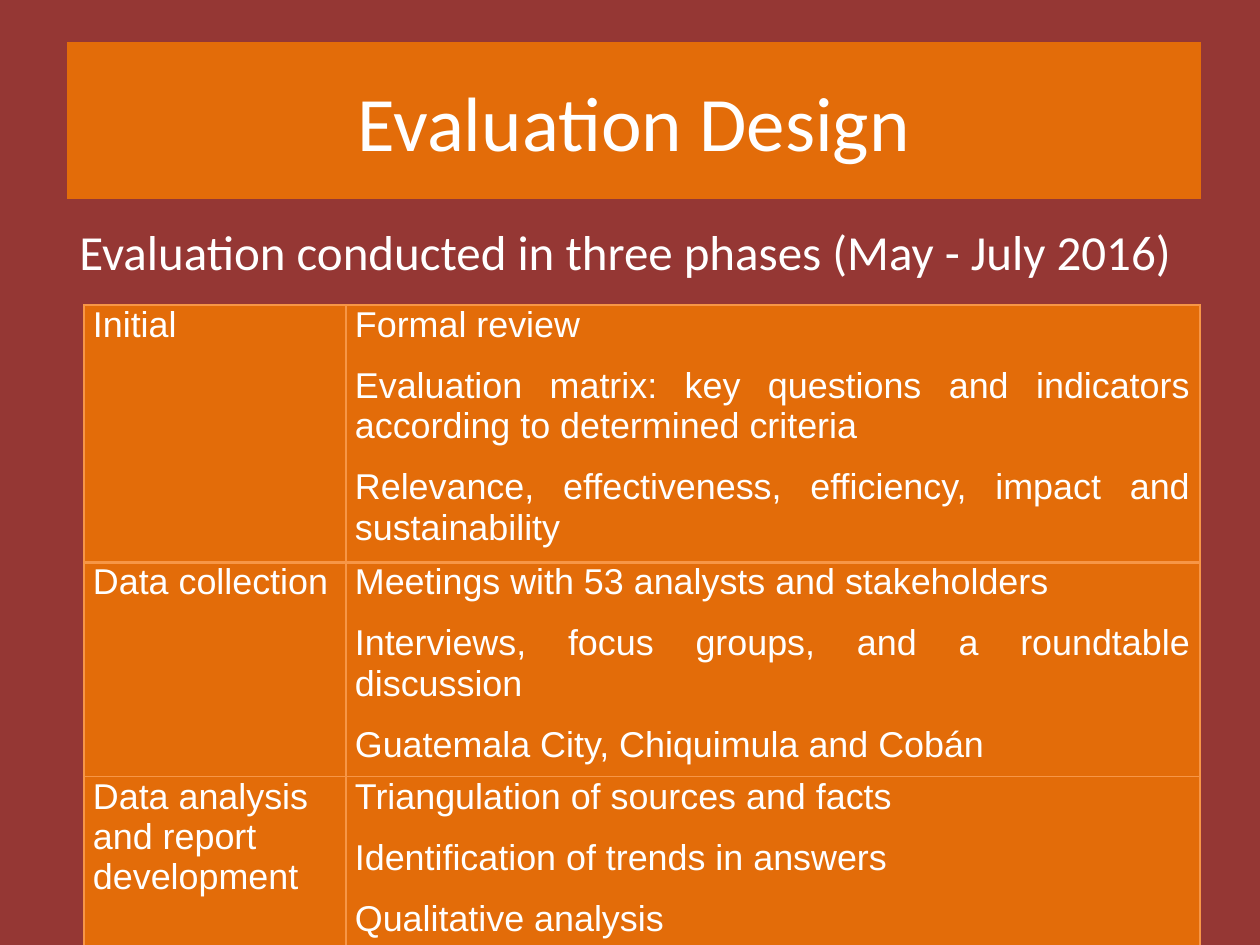
from dataclasses import dataclass
from lxml.etree import SubElement
from pptx import Presentation
from pptx.dml.color import RGBColor as RGB
from pptx.enum.text import MSO_ANCHOR as ANCHOR, PP_ALIGN as ALIGN
from pptx.oxml.ns import qn
from pptx.util import Pt

PX = 914400 // 126


@dataclass(frozen=True)
class Theme:
    back: RGB = RGB.from_string("953734")
    fill: RGB = RGB.from_string("E36C09")
    text: RGB = RGB.from_string("FFFFFF")
    border: str = "F79646"
    head_font: str = "Calibri"
    table_font: str = "Arial"
    title_size: float = 44
    lead_size: float = 28
    table_size: float = 20.5


theme = Theme()
phases = [
    ("Initial", [
        "Formal review",
        "Evaluation matrix: key questions and indicators according to determined criteria ",
        "Relevance, effectiveness, efficiency, impact and sustainability"]),
    ("Data collection", [
        "Meetings with 53 analysts and stakeholders",
        "Interviews, focus groups, and a roundtable discussion",
        "Guatemala City, Chiquimula and Cobán"]),
    ("Data analysis and report development", [
        "Triangulation of sources and facts",
        "Identification of trends in answers",
        "Qualitative analysis"]),
]
col_widths = [262, 854]
row_heights = [213, 176, 176]


def write(tf, lines, font, size, align):
    tf.text = "\n".join(lines)
    tf.word_wrap = True
    for p in tf.paragraphs:
        p.alignment = align
        for r in p.runs:
            r.font.name = font
            r.font.size = Pt(size)
            r.font.color.rgb = theme.text


def add_border(cell, side, width):
    pr = cell._tc.get_or_add_tcPr()
    ln = SubElement(pr, qn(f"a:ln{side}"), w=str(Pt(width)))
    fill = SubElement(ln, qn("a:solidFill"))
    SubElement(fill, qn("a:srgbClr"), val=theme.border)


prs = Presentation()
prs.slide_width, prs.slide_height = 1260 * PX, 945 * PX
s = prs.slides.add_slide(prs.slide_layouts[5])
s.background.fill.solid()
s.background.fill.fore_color.rgb = theme.back

title = s.shapes.title
title.left, title.top, title.width, title.height = 67 * PX, 42 * PX, 1134 * PX, 157 * PX
title.fill.solid()
title.fill.fore_color.rgb = theme.fill
title.text_frame.vertical_anchor = ANCHOR.MIDDLE
write(title.text_frame, ["Evaluation Design"], theme.head_font, theme.title_size, ALIGN.CENTER)

lead = s.shapes.add_textbox(67 * PX, 215 * PX, 1152 * PX, 72 * PX)
lead.text_frame.vertical_anchor = ANCHOR.MIDDLE
write(lead.text_frame, ["Evaluation conducted in three phases (May - July 2016)"],
      theme.head_font, theme.lead_size, ALIGN.JUSTIFY)

table = s.shapes.add_table(len(phases), 2, 84 * PX, 305 * PX,
                           sum(col_widths) * PX, sum(row_heights) * PX).table
table.first_row = table.horz_banding = False
for col, width in zip(table.columns, col_widths):
    col.width = width * PX
for i, (phase, steps) in enumerate(phases):
    table.rows[i].height = row_heights[i] * PX
    for j, (lines, align) in enumerate([([phase], ALIGN.LEFT), (steps, ALIGN.JUSTIFY)]):
        cell = table.cell(i, j)
        cell.margin_left = cell.margin_right = 9 * PX
        cell.margin_top = cell.margin_bottom = 0
        write(cell.text_frame, lines, theme.table_font, theme.table_size, align)
        for p in cell.text_frame.paragraphs[1:]:
            p.space_before = Pt(12)
        for side in "LRTB":
            heavy = (i, side) in [(0, "B"), (1, "T")]
            add_border(cell, side, 2 if heavy else 1)
        cell.fill.solid()
        cell.fill.fore_color.rgb = theme.fill

prs.save("out.pptx")
